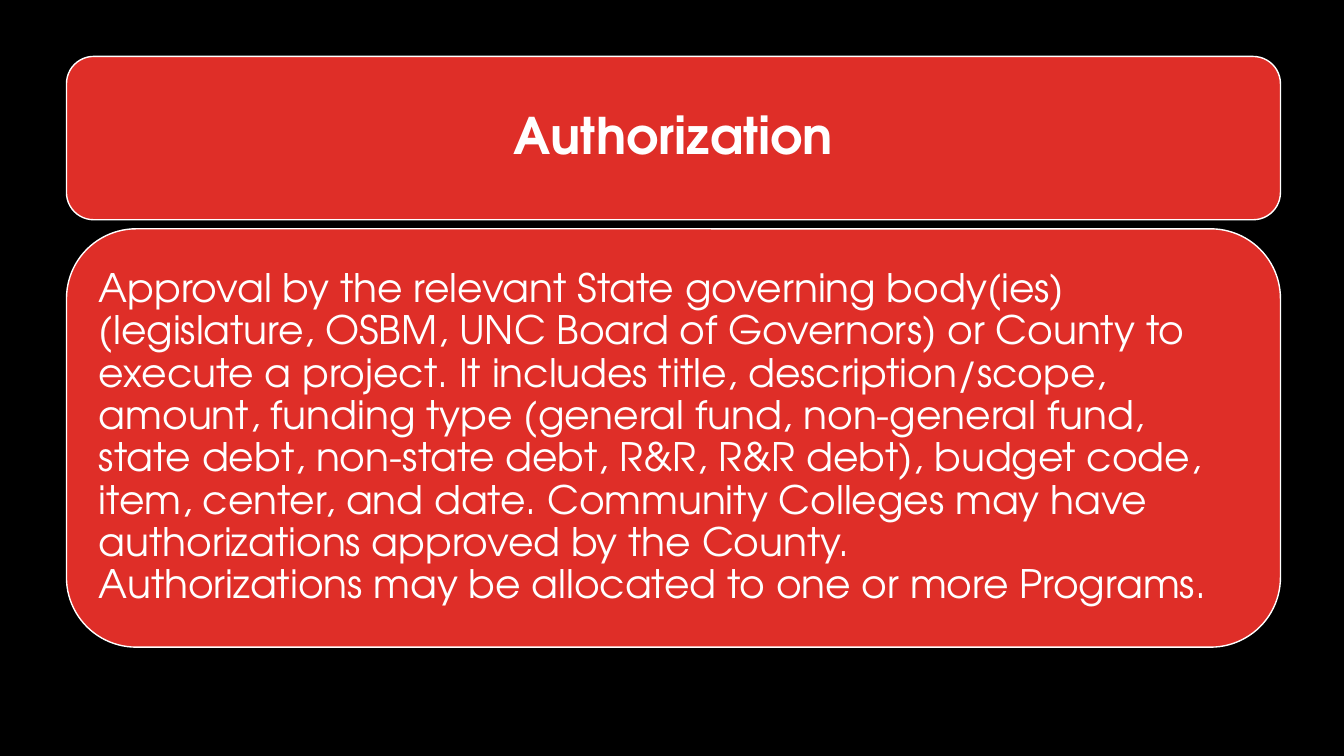
from pptx import Presentation
from pptx.dml.color import RGBColor
from pptx.enum.shapes import MSO_SHAPE
from pptx.enum.text import MSO_ANCHOR, MSO_AUTO_SIZE, PP_ALIGN
from pptx.util import Inches, Pt

BLACK = RGBColor(0x00, 0x00, 0x00)
RED = RGBColor(0xDF, 0x2E, 0x28)
WHITE = RGBColor(0xFF, 0xFF, 0xFF)
ROUND = MSO_SHAPE.ROUNDED_RECTANGLE
MIDDLE = MSO_ANCHOR.MIDDLE
NO_FIT = MSO_AUTO_SIZE.NONE
LEFT, CENTER = PP_ALIGN.LEFT, PP_ALIGN.CENTER
FONT = "TeX Gyre Adventor"

TERM = "Authorization"
MEANING = (
    "Approval by the relevant State governing body(ies) (legislature, OSBM, "
    "UNC Board of Governors) or County to execute a project. It includes "
    "title, description/scope, amount, funding type (general fund, "
    "non-general fund, state debt, non-state debt, R&R, R&R debt), budget "
    "code, item, center, and date. Community Colleges may have \v"
    "authorizations approved by the County. \v"
    "Authorizations may be allocated to one or more Programs."
)


def add_card(slide, x, y, w, h):
    """Draw a red rounded card with a thin white edge."""
    card = slide.shapes.add_shape(
        ROUND, Inches(x), Inches(y), Inches(w), Inches(h))
    card.shadow.inherit = False
    card.fill.solid()
    card.fill.fore_color.rgb = RED
    card.line.color.rgb = WHITE
    card.line.width = Pt(1)
    return card


def set_text(shape, text, size, bold, align, inset):
    """Write one white paragraph, centred in height, into a shape."""
    frame = shape.text_frame
    frame.word_wrap = True
    frame.auto_size = NO_FIT
    frame.vertical_anchor = MIDDLE
    frame.margin_left = frame.margin_right = Inches(inset)
    frame.margin_top = frame.margin_bottom = Inches(inset)
    para = frame.paragraphs[0]
    para.text = text
    para.alignment = align
    para.line_spacing = 0.9
    para.font.name = FONT
    para.font.size = Pt(size)
    para.font.bold = bold
    para.font.color.rgb = WHITE


def add_head(slide, x, y, w, h):
    """Place the slide title on a card."""
    card = add_card(slide, x, y, w, h)
    title = slide.shapes.title
    title._element.addprevious(card._element)
    pad = 0.08
    title.left, title.top = Inches(x + pad), Inches(y + pad)
    title.width, title.height = Inches(w - 2 * pad), Inches(h - 2 * pad)
    set_text(title, TERM, 36, True, CENTER, 0.15)


def add_body(slide, x, y, w, h):
    """Place the meaning of the term in a card."""
    card = add_card(slide, x, y, w, h)
    set_text(card, MEANING, 28, False, LEFT, 0.12)


def main():
    """Build and save the slide."""
    deck = Presentation()
    deck.slide_width, deck.slide_height = Inches(13.33), Inches(7.5)
    slide = deck.slides.add_slide(deck.slide_layouts[5])
    fill = slide.background.fill
    fill.solid()
    fill.fore_color.rgb = BLACK
    add_head(slide, 0.66, 0.56, 12.04, 1.62)
    add_body(slide, 0.66, 2.27, 12.04, 4.15)
    deck.save("out.pptx")


if __name__ == "__main__":
    main()
